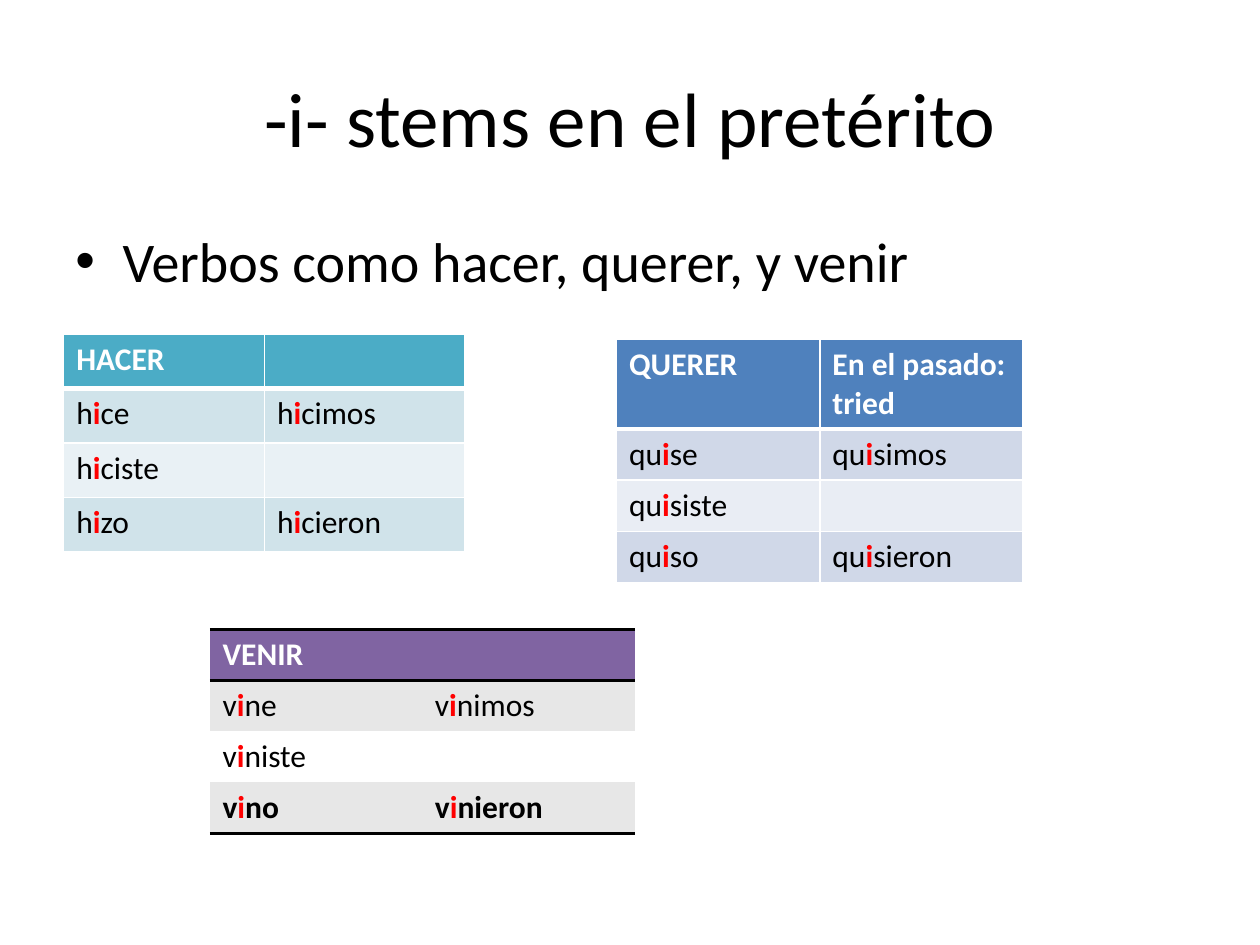
from lxml.etree import SubElement
from pptx import Presentation
from pptx.dml.color import RGBColor
from pptx.enum.text import MSO_ANCHOR as Anchor, PP_ALIGN as Align
from pptx.oxml.ns import qn
from pptx.util import Pt

FONT = "Calibri"
BLACK, WHITE, RED = "000000", "FFFFFF", "FF0000"
NO_STYLE = "{2D5ABB26-0587-4C30-8999-92F81FD0307C}"

TITLE = "-i- stems en el pretérito"
BULLET = "Verbos como hacer, querer, y venir"

# Edges are (colour, width): horizontal ones run from the top to the bottom.
THIN, THICK, RULE = (WHITE, 1), (WHITE, 3), (BLACK, 2)
GRID = {"horizontal": [THIN, THICK, THIN, THIN, THIN], "vertical": THIN}
RULED = {"horizontal": [RULE, RULE, None, None, RULE], "vertical": None}

# Stars enclose the stem vowel.
VERBS = [
    {"header": ("HACER", ""),
     "forms": [("h*i*ce", "h*i*cimos"), ("h*i*ciste", ""), ("h*i*zo", "h*i*cieron")],
     "position": (36.4, 191), "column": 114.7, "rows": (31.1,) * 4,
     "fills": ("4BACC6", "D0E3EA", "E9F1F5", "D0E3EA"),
     "edges": GRID, "bold_rows": (0,)},
    {"header": ("QUERER", "En el pasado: tried"),
     "forms": [("qu*i*se", "qu*i*simos"), ("qu*i*siste", ""), ("qu*i*so", "qu*i*sieron")],
     "position": (352.3, 194), "column": 116.2, "rows": (51.2, 29.2, 29.2, 29.2),
     "fills": ("4F81BD", "D0D8E8", "E9EDF4", "D0D8E8"),
     "edges": GRID, "bold_rows": (0,)},
    {"header": ("VENIR", ""),
     "forms": [("v*i*ne", "v*i*nimos"), ("v*i*niste", ""), ("v*i*no", "v*i*nieron")],
     "position": (120, 359.5), "column": 121.4, "rows": (29.2,) * 4,
     "fills": ("8064A2", "E7E7E7", WHITE, "E7E7E7"),
     "edges": RULED, "bold_rows": (0, 3)},
]


def rgb(value):
    return RGBColor.from_string(value)


def add_run(paragraph, text, size, color=BLACK, bold=False):
    run = paragraph.add_run()
    run.text = text
    for name, value in {"name": FONT, "size": Pt(size), "bold": bold}.items():
        setattr(run.font, name, value)
    run.font.color.rgb = rgb(color)


def place(shape, left, top, width, height):
    box = {"left": left, "top": top, "width": width, "height": height}
    for name, value in box.items():
        setattr(shape, name, Pt(value))


def add_edge(cell, side, edge):
    """Draw one cell border; an edge of None leaves it open."""
    color, width = edge or (None, 0)
    line = SubElement(cell._tc.get_or_add_tcPr(), qn(f"a:ln{side}"), w=str(Pt(width)))
    if edge:
        SubElement(SubElement(line, qn("a:solidFill")), qn("a:srgbClr"), val=color)
    else:
        SubElement(line, qn("a:noFill"))


def add_bullet(slide):
    box = slide.shapes.add_textbox(0, 0, 0, 0)
    place(box, 36, 126, 648, 356.4)
    box.text_frame.word_wrap = True
    paragraph = box.text_frame.paragraphs[0]
    paragraph.space_before = Pt(6.4)
    add_run(paragraph, BULLET, 32)
    properties = paragraph._p.get_or_add_pPr()
    properties.set("marL", str(Pt(27)))
    properties.set("indent", str(Pt(-27)))
    SubElement(properties, qn("a:buFont"), typeface="Arial")
    SubElement(properties, qn("a:buChar"), char="•")


def add_verb_table(slide, verb):
    left, top = verb["position"]
    rows = [verb["header"], *verb["forms"]]
    frame = slide.shapes.add_table(len(rows), 2, Pt(left), Pt(top),
                                   Pt(2 * verb["column"]), Pt(sum(verb["rows"])))
    table = frame.table
    table._tbl.tblPr.find(qn("a:tableStyleId")).text = NO_STYLE
    table.horz_banding = False
    for column in table.columns:
        column.width = Pt(verb["column"])

    horizontal, vertical = verb["edges"]["horizontal"], verb["edges"]["vertical"]
    for r, texts in enumerate(rows):
        table.rows[r].height = Pt(verb["rows"][r])
        bold = r in verb["bold_rows"]
        for c, text in enumerate(texts):
            cell = table.cell(r, c)
            edges = {"L": vertical, "R": vertical,
                     "T": horizontal[r], "B": horizontal[r + 1]}
            for side, edge in edges.items():
                add_edge(cell, side, edge)
            cell.fill.solid()
            cell.fill.fore_color.rgb = rgb(verb["fills"][r])
            paragraph = cell.text_frame.paragraphs[0]
            paragraph.font.size = Pt(18)
            for i, part in enumerate(text.split("*")):
                if part:
                    is_vowel = i % 2 == 1
                    color = RED if is_vowel else WHITE if r == 0 else BLACK
                    add_run(paragraph, part, 18, color, bold or is_vowel)


def main():
    presentation = Presentation()
    presentation.slide_width, presentation.slide_height = Pt(720), Pt(540)
    slide = presentation.slides.add_slide(presentation.slide_layouts[5])

    title = slide.shapes.title
    place(title, 36, 21.6, 648, 90)
    title.text_frame.vertical_anchor = Anchor.MIDDLE
    paragraph = title.text_frame.paragraphs[0]
    paragraph.alignment = Align.CENTER
    add_run(paragraph, TITLE, 44)

    add_bullet(slide)
    for verb in VERBS:
        add_verb_table(slide, verb)
    presentation.save("out.pptx")


if __name__ == "__main__":
    main()
